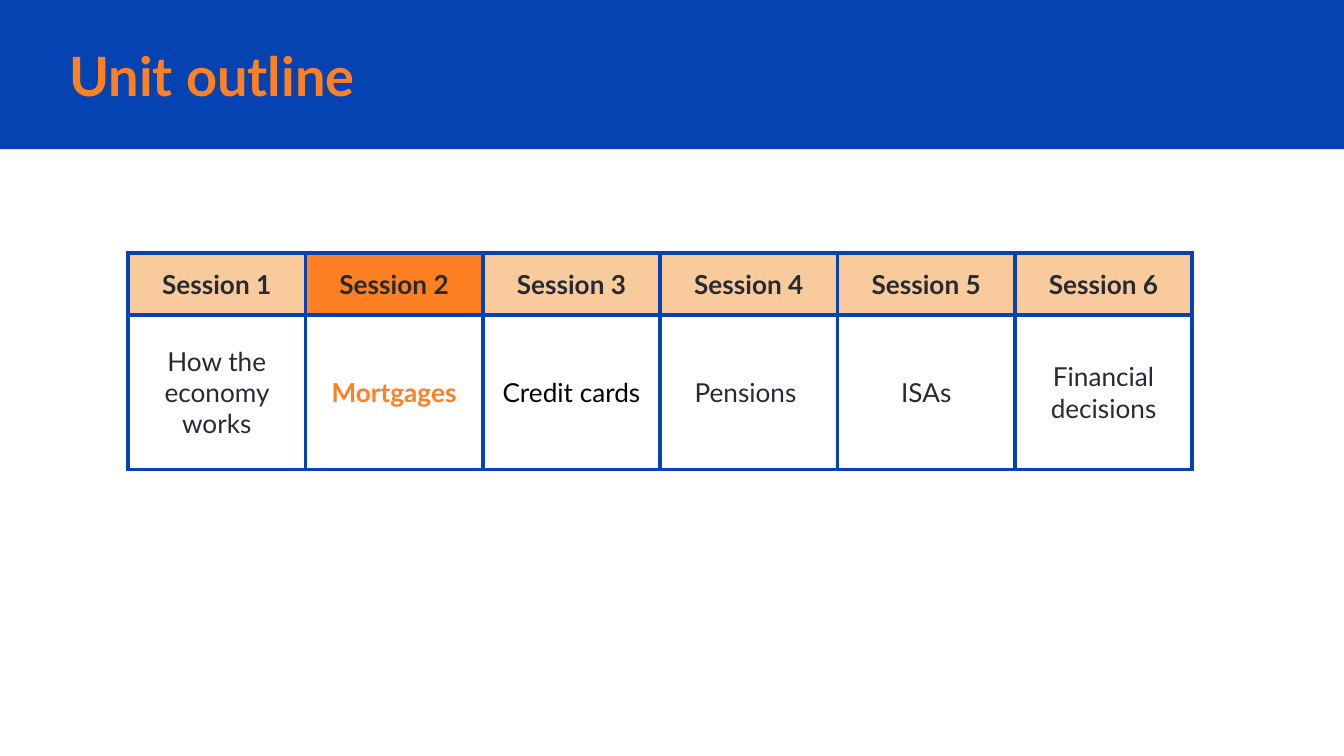
import pptx
import pptx.dml.color
import pptx.enum.shapes
import pptx.enum.text
import pptx.oxml
import pptx.oxml.ns
import pptx.util

Inch = pptx.util.Inches
Align = pptx.enum.text.PP_ALIGN
Anchor = pptx.enum.text.MSO_ANCHOR
BLUE, ORANGE, PEACH, INK = "0543B3", "FF8022", "F9CB9C", "262A33"
WIDE = 10
HIGH = WIDE * 9 / 16
PLAN = [
    ("Session 1", "How the economy works", {}),
    ("Session 2", "Mortgages", {"tint": ORANGE, "bold": True}),
    ("Session 3", "Credit cards", {"tint": "000000"}),
    ("Session 4", "Pensions ", {}),
    ("Session 5", "ISAs", {}),
    ("Session 6", "Financial decisions", {}),
]


def color(text):
    return pptx.dml.color.RGBColor.from_string(text)


def paint(shape, tint):
    shape.fill.solid()
    shape.fill.fore_color.rgb = color(tint)


def write(frame, text, size=14, tint=INK, bold=False, align=Align.CENTER):
    para = frame.paragraphs[0]
    para.alignment = align
    run = para.add_run()
    run.text = text
    font = run.font
    font.name = "Lato"
    font.size = pptx.util.Pt(size)
    font.bold = bold
    font.color.rgb = color(tint)


def inset(item, gap):
    item.margin_left = item.margin_right = Inch(gap)
    item.margin_top = item.margin_bottom = Inch(gap)


def border(cell, tint, width):
    props = cell._tc.get_or_add_tcPr()
    space = pptx.oxml.ns.nsdecls("a")
    for spot, side in enumerate(("lnL", "lnR", "lnT", "lnB")):
        line = pptx.oxml.parse_xml(
            f'<a:{side} {space} w="{pptx.util.Pt(width)}"><a:solidFill>'
            f'<a:srgbClr val="{tint}"/></a:solidFill></a:{side}>')
        props.insert(spot, line)


def header(slide, text, left, top, width, height):
    band = slide.shapes.add_shape(
        pptx.enum.shapes.MSO_SHAPE.RECTANGLE,
        Inch(left), Inch(top), Inch(width), Inch(height))
    band.shadow.inherit = False
    paint(band, BLUE)
    band.line.fill.background()
    title = slide.shapes.title
    title.element.addprevious(band.element)
    title.left, title.width = Inch(left + 0.0415 * width), Inch(0.846 * width)
    title.top, title.height = Inch(top + 0.25 * height), Inch(0.5 * height)
    frame = title.text_frame
    frame.word_wrap = True
    frame.auto_size = pptx.enum.text.MSO_AUTO_SIZE.NONE
    frame.vertical_anchor = Anchor.MIDDLE
    inset(frame, 0.1)
    write(frame, text, size=29, tint=ORANGE, bold=True, align=Align.LEFT)


def outline(slide, plan, left, top, width, height):
    table = slide.shapes.add_table(
        2, len(plan), Inch(left), Inch(top), Inch(width), Inch(height)).table
    table.first_row = table.horz_banding = False
    for row, share in zip(table.rows, (2 / 7, 5 / 7)):
        row.height = Inch(height * share)
    for spot, (name, topic, style) in enumerate(plan):
        table.columns[spot].width = Inch(width / len(plan))
        head, body = table.cell(0, spot), table.cell(1, spot)
        for cell, gap in ((head, 0.1), (body, 0.07)):
            cell.vertical_anchor = Anchor.MIDDLE
            inset(cell, gap)
            border(cell, BLUE, 2.25)
        paint(head, ORANGE if style.get("bold") else PEACH)
        body.fill.background()
        write(head.text_frame, name, bold=True)
        write(body.text_frame, topic, **style)


def main():
    deck = pptx.Presentation()
    deck.slide_width, deck.slide_height = Inch(WIDE), Inch(HIGH)
    slide = deck.slides.add_slide(deck.slide_layouts[5])
    header(slide, "Unit outline", 0, 0, WIDE, 1.11)
    outline(slide, PLAN, 0.0953 * WIDE, 0.335 * HIGH, 0.792 * WIDE, 1.61)
    deck.save("out.pptx")


if __name__ == "__main__":
    main()
